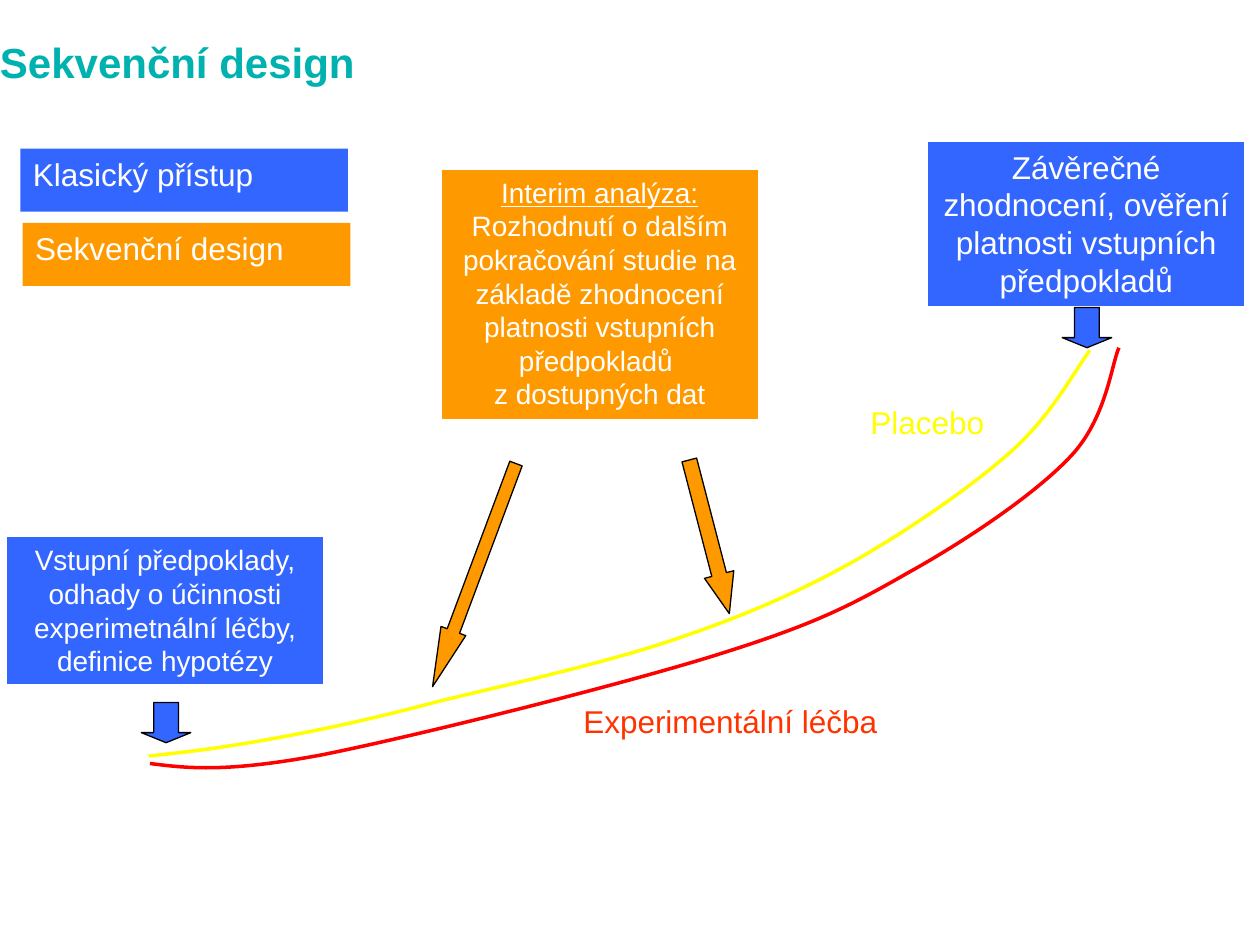
from copy import deepcopy

from pptx import Presentation
from pptx.dml.color import RGBColor
from pptx.enum.shapes import MSO_SHAPE as Preset
from pptx.enum.text import MSO_ANCHOR as Anchor, PP_ALIGN as Align
from pptx.oxml.ns import qn
from pptx.oxml.xmlchemy import OxmlElement
from pptx.util import Pt

BLUE, ORANGE, WHITE, BLACK = "3366FF", "FF9900", "FFFFFF", "000000"
YELLOW, RED, ORANGE_RED, TEAL = "FFFF00", "FF0000", "FF3300", "00B2AF"

PLACEBO_CURVE = [
    (85, 432), (107.3, 429.8), (128.9, 427), (157, 421.9),
    (184.3, 416.9), (211.7, 411.1), (249.8, 401),
    (288, 391.7), (347, 378.7), (386.6, 365),
    (427, 351.4), (459.4, 337), (491, 319),
    (523.4, 300.2), (557.3, 276.5), (578.9, 257),
    (601.2, 236.9), (615.6, 209.5), (622.8, 200.2),
]
TREATMENT_CURVE = [
    (85.7, 436.3), (108, 439.2), (130.3, 441.4), (184.3, 431.3),
    (238.3, 420.5), (353.5, 391.7), (409, 374.4),
    (464.4, 357.1), (484.6, 347), (518.4, 327.6),
    (552.2, 308.9), (591.8, 282.2), (612, 260.6),
    (632.2, 239), (635, 208.8), (639.4, 198.7),
]


def color(hex_string):
    return RGBColor.from_string(hex_string)


def set_format(target, values):
    for name, value in values.items():
        setattr(target, name, value)


def set_line(shape, hex_string, width):
    shape.line.color.rgb = color(hex_string)
    shape.line.width = Pt(width)


def add_run(paragraph, text, size, hex_string, **font_format):
    run = paragraph.add_run()
    run.text = text
    set_format(run.font, {"name": "Arial", "size": Pt(size), **font_format})
    run.font.color.rgb = color(hex_string)
    return run


def add_line_break(paragraph, run):
    """Break the line in the same font as the run before it."""
    paragraph.add_line_break()
    line_break = paragraph._p.findall(qn("a:br"))[-1]
    line_break.append(deepcopy(run.font._element))


def add_box(slide, frame, fill=None, border=None, align=Align.LEFT):
    """Add a text rectangle and return its first paragraph."""
    lengths = [Pt(value) for value in frame]
    if fill:
        shape = slide.shapes.add_shape(Preset.RECTANGLE, *lengths)
        shape.shadow.inherit = False
        shape.fill.solid()
        shape.fill.fore_color.rgb = color(fill)
        if border:
            set_line(shape, border, 0.75)
        else:
            shape.line.fill.background()
    else:
        shape = slide.shapes.add_textbox(*lengths)
    set_format(shape.text_frame, {"word_wrap": True, "vertical_anchor": Anchor.TOP})
    paragraph = shape.text_frame.paragraphs[0]
    paragraph.alignment = align
    return paragraph


def add_title(slide, text):
    paragraph = add_box(slide, (0, 17.3, 720, 36), WHITE)
    margins = {f"margin_{side}": 0 for side in ("left", "top", "right", "bottom")}
    set_format(paragraph._parent, {"vertical_anchor": Anchor.MIDDLE, **margins})
    add_run(paragraph, text, 24, TEAL, bold=True)


def add_arrow(slide, frame, fill, head_length=0.25, rotation=0):
    lengths = [Pt(value) for value in frame]
    arrow = slide.shapes.add_shape(Preset.DOWN_ARROW, *lengths)
    arrow.shadow.inherit = False
    arrow.adjustments[0] = 0.5
    arrow.adjustments[1] = head_length
    arrow.rotation = rotation
    arrow.fill.solid()
    arrow.fill.fore_color.rgb = color(fill)
    set_line(arrow, BLACK, 0.75)


def add_curve(slide, points, hex_string):
    """Draw a start point followed by triples of Bezier points."""
    start, *others = [(Pt(x), Pt(y)) for x, y in points]
    builder = slide.shapes.build_freeform(*start)
    builder.add_line_segments(others, close=False)
    curve = builder.convert_to_shape()
    segments = list(curve._element.iter(qn("a:lnTo")))
    for index in range(0, len(segments), 3):
        bezier = OxmlElement("a:cubicBezTo")
        segments[index].addprevious(bezier)
        for segment in segments[index:index + 3]:
            bezier.append(segment[0])
            segment.getparent().remove(segment)
    curve.shadow.inherit = False
    curve.fill.background()
    set_line(curve, hex_string, 2)


def add_interim_analysis(slide):
    paragraph = add_box(slide, (252, 96.7, 181.4, 143), ORANGE, WHITE, Align.CENTER)
    add_run(paragraph, "Interim analýza:", 16, WHITE, underline=True)
    decision = add_run(
        paragraph,
        " Rozhodnutí o dalším pokračování studie na základě zhodnocení "
        "platnosti vstupních předpokladů ",
        16, WHITE)
    add_line_break(paragraph, decision)
    add_run(paragraph, "z dostupných dat", 16, WHITE)
    add_arrow(slide, (263.5, 260.6, 15.1, 136.1), ORANGE, 2.244, 20.5)
    add_arrow(slide, (396.7, 261.4, 17.3, 90.7), ORANGE, 1.333, 345.4)


def main():
    presentation = Presentation()
    set_format(presentation, {"slide_width": Pt(720), "slide_height": Pt(540)})
    slide = presentation.slides.add_slide(presentation.slide_layouts[6])

    add_title(slide, "Sekvenční design")
    add_interim_analysis(slide)
    add_curve(slide, PLACEBO_CURVE, YELLOW)
    add_curve(slide, TREATMENT_CURVE, RED)

    for text, frame, size in (
        ("Vstupní předpoklady, odhady o účinnosti experimetnální léčby, "
         "definice hypotézy", (3.6, 306.7, 181.4, 84.6), 16),
        ("Závěrečné zhodnocení, ověření platnosti vstupních předpokladů",
         (530, 80.8, 181.4, 94.3), 18),
    ):
        paragraph = add_box(slide, frame, BLUE, WHITE, Align.CENTER)
        add_run(paragraph, text, size, WHITE)
    for left, top in ((80.8, 401.4), (607, 175.7)):
        add_arrow(slide, (left, top, 28.3, 23), BLUE)

    for text, frame, fill, text_color in (
        ("Klasický přístup", (11.7, 85, 187.2, 36), BLUE, WHITE),
        ("Sekvenční design", (13, 127.4, 187.2, 36), ORANGE, WHITE),
        ("Placebo", (490.3, 226.8, 90.7, 36), None, YELLOW),
        ("Experimentální léčba", (326.2, 397.4, 226.8, 36), None, ORANGE_RED),
    ):
        add_run(add_box(slide, frame, fill), text, 18, text_color)

    presentation.save("out.pptx")


if __name__ == "__main__":
    main()
